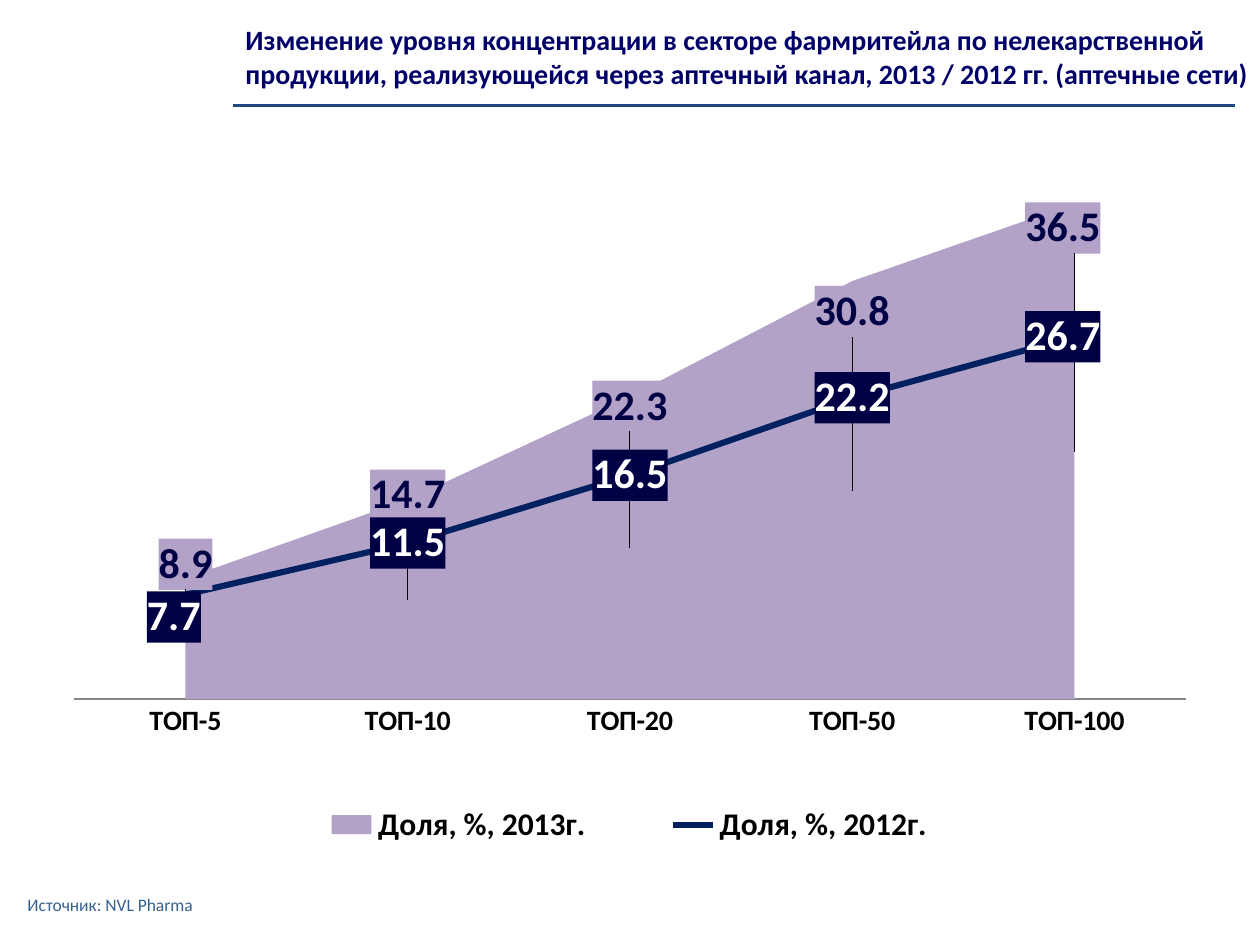
from copy import deepcopy

from lxml import etree
from pptx import Presentation
from pptx.chart.data import CategoryChartData
from pptx.dml.color import RGBColor
from pptx.enum.chart import XL_CHART_TYPE as ChartType
from pptx.enum.chart import XL_LABEL_POSITION as LabelPosition
from pptx.enum.chart import XL_LEGEND_POSITION as LegendPosition
from pptx.enum.chart import XL_MARKER_STYLE as MarkerStyle
from pptx.enum.chart import XL_TICK_MARK as TickMark
from pptx.enum.shapes import MSO_CONNECTOR as Connector
from pptx.enum.text import MSO_ANCHOR as Anchor
from pptx.oxml import parse_xml
from pptx.oxml.ns import nsdecls, qn
from pptx.util import Inches, Pt

FONT = "Calibri"
COLORS = {
    "title": "000068",
    "rule": "1F497D",
    "source": "376092",
    "text": "000000",
    "axis": "868686",
    "area": "B3A2C7",
    "line": "002060",
    "label": "000044",
    "white": "FFFFFF",
}
CHART_WIDTH, CHART_HEIGHT = 9.29, 5.91


def set_font(font, size, color, bold=False):
    font.name = FONT
    font.size = Pt(size)
    font.bold = bold
    font.color.rgb = RGBColor.from_string(COLORS[color])


def add_labels(series, color, fill, position, offsets):
    """Show filled value labels; offsets maps a point to its shift as chart fractions."""
    labels = series.data_labels
    labels.show_value = True
    labels.number_format = "#,##0.0"
    labels.number_format_is_linked = False
    set_font(labels.font, 24, color, True)
    if position is not None:
        labels.position = position
    element = labels._element
    for leader in element.findall(qn("c:showLeaderLines")):
        element.remove(leader)
    element.find(qn("c:numFmt")).addnext(parse_xml(
        f'<c:spPr {nsdecls("c", "a")}><a:solidFill><a:srgbClr val="{COLORS[fill]}"/>'
        '</a:solidFill></c:spPr>'))
    shared = list(element)
    for place, (index, (x, y)) in enumerate(offsets.items()):
        point_label = parse_xml(
            f'<c:dLbl {nsdecls("c")}><c:idx val="{index}"/><c:layout><c:manualLayout>'
            f'<c:x val="{x}"/><c:y val="{y}"/></c:manualLayout></c:layout></c:dLbl>')
        for child in shared:
            point_label.append(deepcopy(child))
        element.insert(place, point_label)


presentation = Presentation()
presentation.slide_width = Inches(10)
presentation.slide_height = Inches(7.5)
slide = presentation.slides.add_slide(presentation.slide_layouts[6])

# Heading rule
rule = slide.shapes.add_connector(
    Connector.STRAIGHT, Inches(1.85), Inches(0.84), Inches(9.8), Inches(0.84))
rule.line.color.rgb = RGBColor.from_string(COLORS["rule"])
rule.line.width = Pt(1.5)
etree.SubElement(rule._element.spPr, qn("a:effectLst"))

# Source and title
texts = [
    ("Источник: NVL Pharma", (0.12, 6.98, 3.17, 0.4), Anchor.MIDDLE, 10, "source", False),
    ("Изменение уровня концентрации в секторе фармритейла по нелекарственной "
     "продукции, реализующейся через аптечный канал, 2013 / 2012 гг. (аптечные сети)",
     (1.85, 0.13, 8.27, 0.64), Anchor.TOP, 16, "title", True),
]
for text, box, anchor, size, color, bold in texts:
    frame = slide.shapes.add_textbox(*map(Inches, box)).text_frame
    frame.word_wrap = True
    frame.vertical_anchor = anchor
    paragraph = frame.paragraphs[0]
    paragraph.text = text
    set_font(paragraph.font, size, color, bold)

# Chart: 2013 as an area, 2012 as a line
data = CategoryChartData()
data.categories = ["ТОП-5", "ТОП-10", "ТОП-20", "ТОП-50", "ТОП-100"]
data.add_series("Доля, %, 2013г.", [8.9, 14.7, 22.3, 30.8, 36.5])
data.add_series("Доля, %, 2012г.", [7.7, 11.5, 16.5, 22.2, 26.7])
chart = slide.shapes.add_chart(
    ChartType.AREA, Inches(0.35), Inches(1.07),
    Inches(CHART_WIDTH), Inches(CHART_HEIGHT), data).chart
chart.has_title = False
set_font(chart.font, 10, "text")

area_chart = chart._chartSpace.find(".//" + qn("c:areaChart"))
line_chart = parse_xml(
    f'<c:lineChart {nsdecls("c")}><c:grouping val="standard"/><c:varyColors val="0"/>'
    '<c:marker val="1"/></c:lineChart>')
line_chart.insert(2, area_chart.findall(qn("c:ser"))[1])
for axis_id in area_chart.findall(qn("c:axId")):
    line_chart.append(deepcopy(axis_id))
area_chart.addnext(line_chart)
plot_area = area_chart.getparent()
plot_area.find(".//" + qn("c:crossBetween")).set("val", "between")

# Area labels start at mid-height, so each is lifted to the top edge
area_plot, line_plot = chart.plots
area_plot.vary_by_categories = False
area_series = area_plot.series[0]
area_series.format.fill.solid()
area_series.format.fill.fore_color.rgb = RGBColor.from_string(COLORS["area"])
add_labels(area_series, "label", "area", None,
           {0: (0, -0.1), 1: (0, -0.14), 2: (0, -0.19), 3: (0, -0.24), 4: (-0.01, -0.3)})

line_series = line_plot.series[0]
line_series.smooth = False
line_series.marker.style = MarkerStyle.NONE
line_series.format.line.color.rgb = RGBColor.from_string(COLORS["line"])
line_series.format.line.width = Pt(3.5)
add_labels(line_series, "white", "label", LabelPosition.CENTER,
           {0: (-0.01, 0.03), 4: (-0.01, 0)})

category_axis = chart.category_axis
category_axis.has_major_gridlines = False
category_axis.major_tick_mark = TickMark.NONE
category_axis.minor_tick_mark = TickMark.NONE
category_axis.format.line.color.rgb = RGBColor.from_string(COLORS["axis"])
category_axis.format.line.width = Pt(1)
set_font(category_axis.tick_labels.font, 16, "text", True)

value_axis = chart.value_axis
value_axis.minimum_scale = 0
value_axis.maximum_scale = 40
value_axis.has_major_gridlines = False
value_axis.tick_labels.number_format = "0.00"
value_axis.tick_labels.number_format_is_linked = False
value_axis.visible = False

chart.has_legend = True
legend = chart.legend
legend.position = LegendPosition.BOTTOM
legend.include_in_layout = False
set_font(legend.font, 18, "text", True)

# Fixed places of the plot and the legend, in inches inside the chart
placements = [
    (plot_area, 0, '<c:layoutTarget val="inner"/>', (0.24, 0.17, 8.82, 4.31)),
    (legend._element, 1, "", (1.67, 5.24, 5.95, 0.47)),
]
for parent, place, target, (left, top, width, height) in placements:
    for layout in parent.findall(qn("c:layout")):
        parent.remove(layout)
    parent.insert(place, parse_xml(
        f'<c:layout {nsdecls("c")}><c:manualLayout>{target}'
        '<c:xMode val="edge"/><c:yMode val="edge"/>'
        f'<c:x val="{left / CHART_WIDTH}"/><c:y val="{top / CHART_HEIGHT}"/>'
        f'<c:w val="{width / CHART_WIDTH}"/><c:h val="{height / CHART_HEIGHT}"/>'
        '</c:manualLayout></c:layout>'))

presentation.save("out.pptx")
